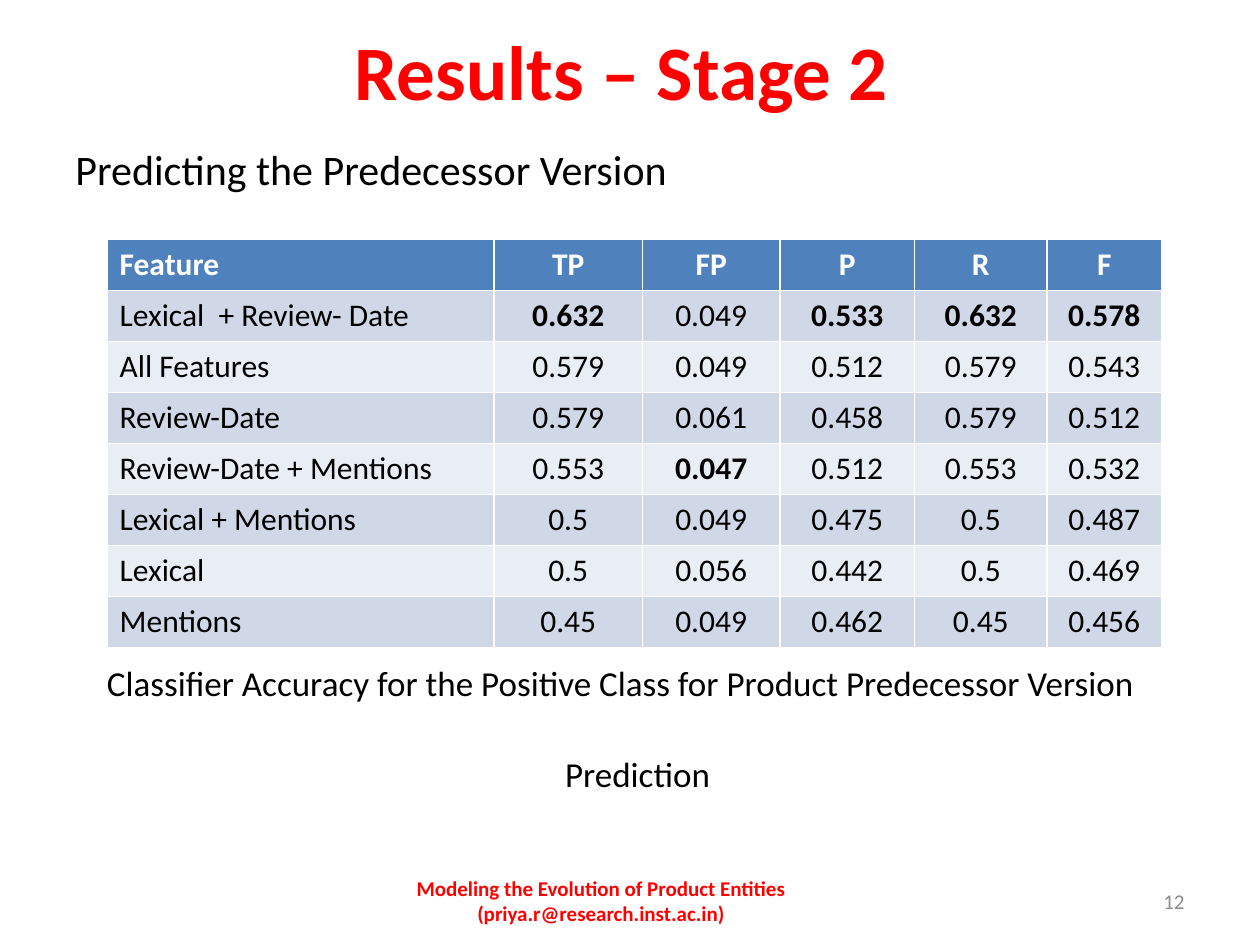
import pptx
import pptx.util
import pptx.dml.color
import pptx.enum.text

Inches = pptx.util.Inches
Pt = pptx.util.Pt
RGBColor = pptx.dml.color.RGBColor
ALIGN = pptx.enum.text.PP_ALIGN
ANCHOR = pptx.enum.text.MSO_ANCHOR

RED = RGBColor(0xFF, 0x00, 0x00)
BLACK = RGBColor(0x00, 0x00, 0x00)
WHITE = RGBColor(0xFF, 0xFF, 0xFF)
GRAY = RGBColor(0x8C, 0x8C, 0x8C)
HEADER = RGBColor(0x4F, 0x81, 0xBD)
BAND_DARK = RGBColor(0xD0, 0xD8, 0xE8)
BAND_LIGHT = RGBColor(0xE9, 0xED, 0xF4)


def format_text(p, size, color, bold=False, align=ALIGN.LEFT):
    p.alignment = align
    for r in p.runs:
        r.font.name = "Calibri"
        r.font.size = Pt(size)
        r.font.bold = bold
        r.font.color.rgb = color


def add_text(s, box, text, size, color, bold=False, align=ALIGN.LEFT, anchor=ANCHOR.MIDDLE):
    sp = s.shapes.add_textbox(*[Inches(v) for v in box])
    tf = sp.text_frame
    tf.word_wrap = True
    tf.vertical_anchor = anchor
    tf.text = text
    for p in tf.paragraphs:
        format_text(p, size, color, bold, align)
    return tf


prs = pptx.Presentation()
prs.slide_width = Inches(10)
prs.slide_height = Inches(7.5)
s = prs.slides.add_slide(prs.slide_layouts[6])

add_text(s, (0.15, 0.03, 9.57, 1.05), "Results – Stage 2", 44, RED, True, ALIGN.CENTER)
add_text(s, (0.5, 1.09, 9.22, 0.55), "Predicting the Predecessor Version", 24, BLACK,
         anchor=ANCHOR.TOP)

rows = [
    ("Feature", "TP", "FP", "P", "R", "F"),
    ("Lexical  + Review- Date", "0.632", "0.049", "0.533", "0.632", "0.578"),
    ("All Features", "0.579", "0.049", "0.512", "0.579", "0.543"),
    ("Review-Date", "0.579", "0.061", "0.458", "0.579", "0.512"),
    ("Review-Date + Mentions", "0.553", "0.047", "0.512", "0.553", "0.532"),
    ("Lexical + Mentions", "0.5", "0.049", "0.475", "0.5", "0.487"),
    ("Lexical", "0.5", "0.056", "0.442", "0.5", "0.469"),
    ("Mentions", "0.45", "0.049", "0.462", "0.45", "0.456"),
]
best_cells = {(1, 1), (1, 3), (1, 4), (1, 5), (4, 2)}
col_widths = [3.07, 1.18, 1.09, 1.07, 1.05, 0.91]

table = s.shapes.add_table(len(rows), len(col_widths), Inches(0.85), Inches(1.9),
                           Inches(8.37), Inches(3.24)).table
for col, width in zip(table.columns, col_widths):
    col.width = Inches(width)

for i, row in enumerate(rows):
    fill = HEADER if i == 0 else BAND_DARK if i % 2 else BAND_LIGHT
    for j, value in enumerate(row):
        cell = table.cell(i, j)
        cell.fill.solid()
        cell.fill.fore_color.rgb = fill
        cell.text_frame.text = value
        format_text(cell.text_frame.paragraphs[0], 18, BLACK if i else WHITE,
                    i == 0 or (i, j) in best_cells, ALIGN.CENTER if j else ALIGN.LEFT)

tf = add_text(s, (0.75, 5.2, 8.62, 1.3),
              "Classifier Accuracy for the Positive Class for Product Predecessor Version\nPrediction",
              20, BLACK, anchor=ANCHOR.TOP)
p = tf.paragraphs[1]
p.alignment = ALIGN.CENTER
p.space_before = Pt(28)

add_text(s, (2.54, 6.95, 4.46, 0.4),
         "Modeling the Evolution of Product Entities (priya.r@research.inst.ac.in)",
         12, RED, True, ALIGN.CENTER)
add_text(s, (7.17, 6.95, 2.33, 0.4), "12", 12, GRAY, align=ALIGN.RIGHT)

prs.save("out.pptx")
